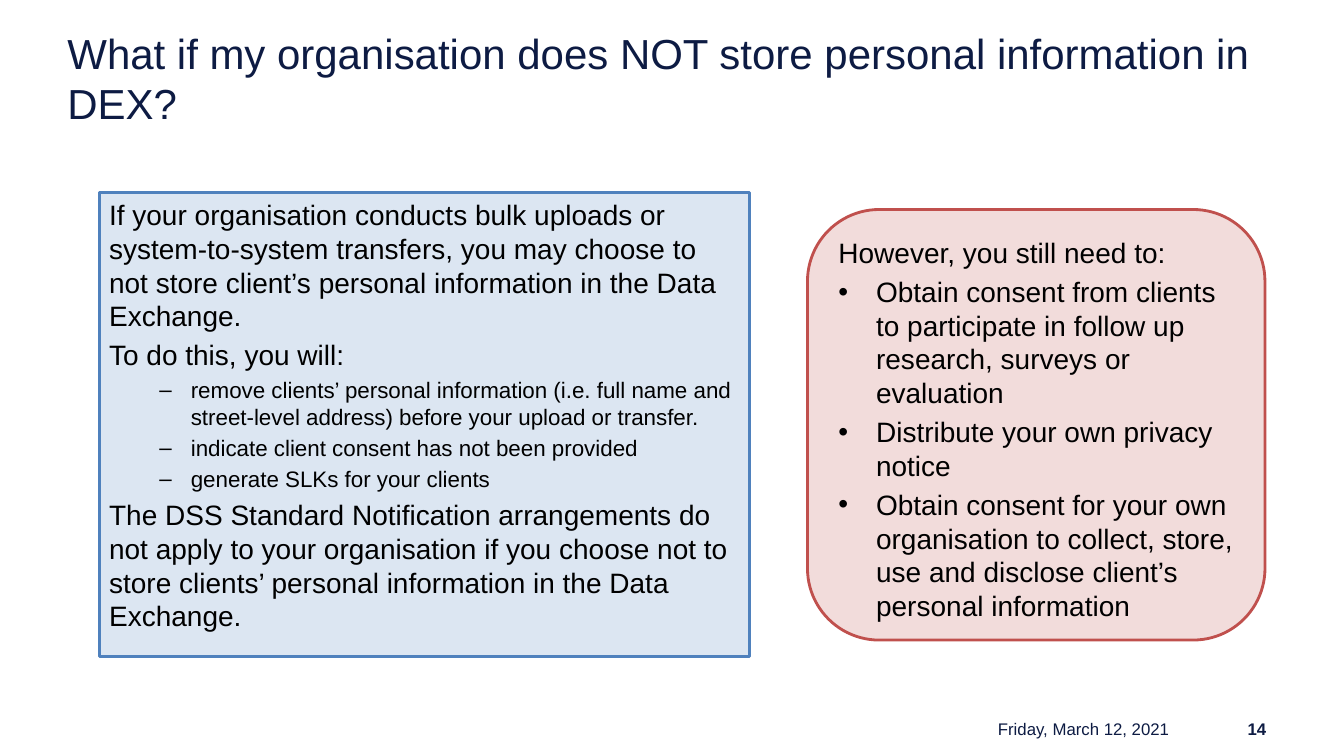
from dataclasses import dataclass

from lxml.etree import SubElement
from pptx import Presentation
from pptx.dml.color import RGBColor
from pptx.enum.shapes import MSO_SHAPE
from pptx.enum.text import MSO_ANCHOR, PP_ALIGN
from pptx.oxml.ns import qn
from pptx.util import Cm, Pt

NAVY = "0D1B43"
BLACK = "000000"


def color(value):
    return RGBColor.from_string(value)


@dataclass
class Item:
    text: str
    size: int = 20
    bullet: str = ""
    margin: float = 0
    hanging: float = 0


def dash(text):
    return Item(text, 16, "–", 2.06, 0.79)


def dot(text):
    return Item(text, 20, "•", 0.95, 0.95)


class SlideBuilder:
    font_name = "Arial"

    def __init__(self, slide):
        self.slide = slide

    def add_run(self, paragraph, text, size, font_color, bold=False):
        run = paragraph.add_run()
        run.text = text
        run.font.name = self.font_name
        run.font.size = Pt(size)
        run.font.bold = bold
        run.font.color.rgb = color(font_color)

    def add_label(self, text, left, top, width, height, size, bold=False,
                  align=PP_ALIGN.LEFT, anchor=MSO_ANCHOR.TOP, inset=0.25):
        shape = self.slide.shapes.add_textbox(Cm(left), Cm(top), Cm(width), Cm(height))
        frame = shape.text_frame
        frame.word_wrap = True
        frame.vertical_anchor = anchor
        frame.margin_left = frame.margin_right = Cm(inset)
        frame.margin_top = frame.margin_bottom = Cm(inset / 2)
        paragraph = frame.paragraphs[0]
        paragraph.alignment = align
        self.add_run(paragraph, text, size, NAVY, bold)

    def add_panel(self, preset, left, top, width, height, fill, line, items):
        shape = self.slide.shapes.add_shape(preset, Cm(left), Cm(top), Cm(width), Cm(height))
        shape.shadow.inherit = False
        shape.fill.solid()
        shape.fill.fore_color.rgb = color(fill)
        shape.line.color.rgb = color(line)
        shape.line.width = Pt(2)
        frame = shape.text_frame
        frame.word_wrap = True
        frame.vertical_anchor = MSO_ANCHOR.TOP
        for index, item in enumerate(items):
            paragraph = frame.add_paragraph() if index else frame.paragraphs[0]
            self.add_item(paragraph, item)
            if index:
                paragraph.space_before = Pt(item.size * 0.2)

    def add_item(self, paragraph, item):
        paragraph.alignment = PP_ALIGN.LEFT
        if item.bullet:
            properties = paragraph._p.get_or_add_pPr()
            properties.set("marL", str(Cm(item.margin)))
            properties.set("indent", str(-Cm(item.hanging)))
            SubElement(properties, qn("a:buFont"), typeface=self.font_name)
            SubElement(properties, qn("a:buChar"), char=item.bullet)
        self.add_run(paragraph, item.text, item.size, BLACK)


def main():
    presentation = Presentation()
    presentation.slide_width = Cm(33.87)
    presentation.slide_height = Cm(19.05)
    builder = SlideBuilder(presentation.slides.add_slide(presentation.slide_layouts[6]))

    builder.add_panel(MSO_SHAPE.RECTANGLE, 2.5, 4.86, 16.4, 11.69, "DCE6F2", "4F81BD", [
        Item("If your organisation conducts bulk uploads or system-to-system transfers, "
             "you may choose to not store client’s personal information in the Data Exchange."),
        Item("To do this, you will:"),
        dash("remove clients’ personal information (i.e. full name and street-level address) "
             "before your upload or transfer."),
        dash("indicate client consent has not been provided"),
        dash("generate SLKs for your clients"),
        Item("The DSS Standard Notification arrangements do not apply to your organisation "
             "if you choose not to store clients’ personal information in the Data Exchange."),
    ])
    builder.add_label("What if my organisation does NOT store personal information in DEX?",
                      1.7, 0.69, 30.48, 1.68, 30, inset=0)
    footer = {"top": 18.08, "height": 0.58, "size": 12,
              "align": PP_ALIGN.RIGHT, "anchor": MSO_ANCHOR.MIDDLE}
    builder.add_label("14", left=29.39, width=2.77, bold=True, **footer)
    builder.add_label("Friday, March 12, 2021", left=21.82, width=7.9, **footer)
    builder.add_panel(MSO_SHAPE.ROUNDED_RECTANGLE, 20.35, 5.28, 11.53, 10.85, "F2DCDB", "C0504D", [
        Item("However, you still need to:"),
        dot("Obtain consent from clients to participate in follow up research, surveys or evaluation"),
        dot("Distribute your own privacy notice"),
        dot("Obtain consent for your own organisation to collect, store, use and disclose "
            "client’s personal information"),
    ])
    presentation.save("out.pptx")


if __name__ == "__main__":
    main()
